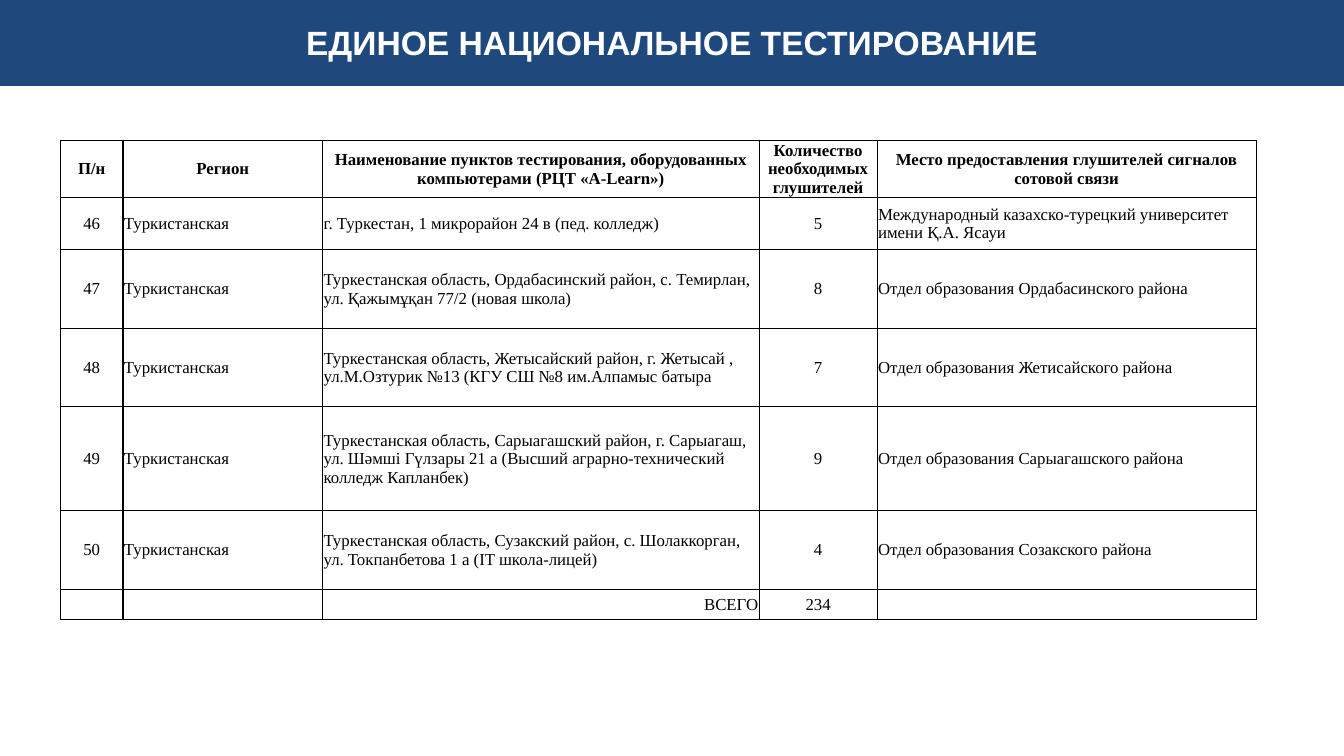
from dataclasses import dataclass

from lxml.etree import SubElement
from pptx import Presentation
from pptx.dml.color import RGBColor
from pptx.enum.shapes import MSO_SHAPE as Shape
from pptx.enum.text import MSO_ANCHOR as Anchor, PP_ALIGN as Align
from pptx.oxml.ns import qn
from pptx.util import Inches, Pt


@dataclass(frozen=True)
class Theme:
    """Colours, fonts and type sizes of the slide."""
    banner: RGBColor = RGBColor.from_string("1F497D")
    light: RGBColor = RGBColor.from_string("FFFFFF")
    ink: RGBColor = RGBColor.from_string("000000")
    title_font: str = "Arial"
    table_font: str = "Times New Roman"
    title_size: int = 24
    table_size: int = 12
    rule_width: int = 1


THEME = Theme()
TITLE = "ЕДИНОЕ НАЦИОНАЛЬНОЕ ТЕСТИРОВАНИЕ"
REGION = "Туркистанская"
HEADER = (
    "П/н",
    "Регион",
    "Наименование пунктов тестирования, оборудованных компьютерами (РЦТ «A-Learn»)",
    "Количество необходимых глушителей",
    "Место предоставления глушителей сигналов сотовой связи",
)
TEST_CENTRES = (
    ("46", REGION, "г. Туркестан, 1 микрорайон 24 в (пед. колледж)", "5",
     "Международный казахско-турецкий университет имени Қ.А. Ясауи"),
    ("47", REGION,
     "Туркестанская область, Ордабасинский район, с. Темирлан, "
     "ул. Қажымұқан 77/2 (новая школа)", "8",
     "Отдел образования Ордабасинского района"),
    ("48", REGION,
     "Туркестанская область, Жетысайский район, г. Жетысай , "
     "ул.М.Озтурик №13 (КГУ СШ №8 им.Алпамыс батыра", "7",
     "Отдел образования Жетисайского района"),
    ("49", REGION,
     "Туркестанская область, Сарыагашский район, г. Сарыагаш, "
     "ул. Шәмші Гүлзары 21 а (Высший аграрно-технический колледж Капланбек)", "9",
     "Отдел образования Сарыагашского района"),
    ("50", REGION,
     "Туркестанская область, Сузакский район, с. Шолаккорган, "
     "ул. Токпанбетова 1 а (IT школа-лицей)", "4",
     "Отдел образования Созакского района"),
)
TOTAL = ("", "", "ВСЕГО", "234", "")
COLUMN_WIDTHS = (0.62, 1.98, 4.33, 1.17, 3.76)
ROW_HEIGHTS = (0.56, 0.52, 0.78, 0.78, 1.03, 0.78, 0.3)
BODY_ALIGN = (Align.CENTER, Align.LEFT, Align.LEFT, Align.CENTER, Align.LEFT)
HEADER_ALIGN = (Align.CENTER,) * len(HEADER)
TOTAL_ALIGN = (Align.CENTER, Align.LEFT, Align.RIGHT, Align.CENTER, Align.LEFT)


def style_paragraph(paragraph, font_name, size, color, bold, align):
    """Set the alignment and font of a whole paragraph."""
    paragraph.alignment = align
    font = paragraph.font
    font.name, font.size, font.bold = font_name, Pt(size), bold
    font.color.rgb = color


def add_banner(slide, left, top, width, height):
    """Draw the title band across the given box."""
    banner = slide.shapes.add_shape(Shape.RECTANGLE, left, top, width, height)
    banner.shadow.inherit = False
    banner.fill.solid()
    banner.fill.fore_color.rgb = THEME.banner
    banner.line.color.rgb = THEME.banner
    banner.line.width = Pt(2)
    frame = banner.text_frame
    frame.word_wrap = True
    frame.vertical_anchor = Anchor.MIDDLE
    frame.margin_left = frame.margin_right = Inches(0.07)
    frame.margin_top = frame.margin_bottom = Inches(0.04)
    frame.text = TITLE
    style_paragraph(frame.paragraphs[0], THEME.title_font, THEME.title_size,
                    THEME.light, True, Align.CENTER)


def add_borders(cell):
    """Rule all four sides of a cell."""
    properties = cell._tc.get_or_add_tcPr()
    for side in ("a:lnL", "a:lnR", "a:lnT", "a:lnB"):
        line = SubElement(properties, qn(side), w=str(Pt(THEME.rule_width)))
        fill = SubElement(line, qn("a:solidFill"))
        SubElement(fill, qn("a:srgbClr"), val=str(THEME.ink))


def fill_cell(cell, text, align, bold):
    """Write and style one table cell."""
    cell.vertical_anchor = Anchor.MIDDLE
    cell.margin_left = cell.margin_right = cell.margin_top = Inches(0.01)
    cell.margin_bottom = 0
    cell.text = text
    style_paragraph(cell.text_frame.paragraphs[0], THEME.table_font,
                    THEME.table_size, THEME.ink, bold, align)
    add_borders(cell)
    cell.fill.background()


def add_centres_table(slide, left, top, width, height):
    """Fit the table of test centres into the given box."""
    rows = (HEADER, *TEST_CENTRES, TOTAL)
    alignments = (HEADER_ALIGN, *[BODY_ALIGN] * len(TEST_CENTRES), TOTAL_ALIGN)
    table = slide.shapes.add_table(len(rows), len(HEADER), left, top, width, height).table
    table.first_row = table.horz_banding = False
    for column, share in zip(table.columns, COLUMN_WIDTHS):
        column.width = int(width * share / sum(COLUMN_WIDTHS))
    for row, share in zip(table.rows, ROW_HEIGHTS):
        row.height = int(height * share / sum(ROW_HEIGHTS))
    for index, (row, texts, aligns) in enumerate(zip(table.rows, rows, alignments)):
        for cell, text, align in zip(row.cells, texts, aligns):
            fill_cell(cell, text, align, index == 0)


def main():
    """Build and save the presentation."""
    presentation = Presentation()
    presentation.slide_width = Inches(13.33)
    presentation.slide_height = Inches(7.5)
    slide = presentation.slides.add_slide(presentation.slide_layouts[6])
    add_banner(slide, 0, 0, presentation.slide_width, Inches(0.84))
    add_centres_table(slide, Inches(0.6), Inches(1.39),
                      Inches(sum(COLUMN_WIDTHS)), Inches(sum(ROW_HEIGHTS)))
    presentation.save("out.pptx")


if __name__ == "__main__":
    main()
